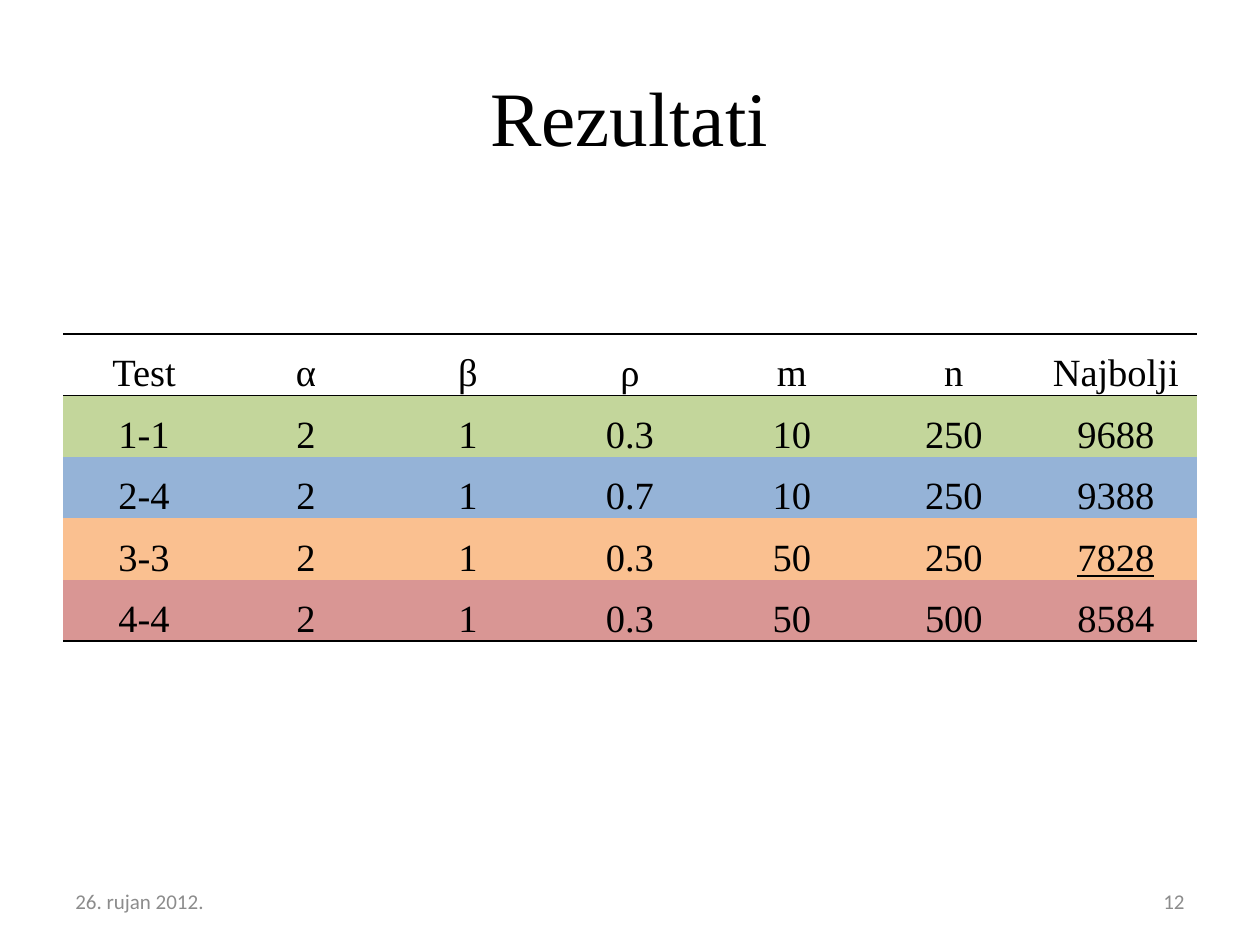
from lxml import etree
from pptx import Presentation, util as u
from pptx.dml.color import RGBColor
from pptx.enum import text
from pptx.oxml import ns

BLACK = RGBColor(0x00, 0x00, 0x00)
WHITE = RGBColor(0xFF, 0xFF, 0xFF)
GRAY = RGBColor(0x8C, 0x8C, 0x8C)
GREEN = RGBColor(0xC3, 0xD6, 0x9B)
BLUE = RGBColor(0x95, 0xB3, 0xD7)
ORANGE = RGBColor(0xFA, 0xC0, 0x90)
RED = RGBColor(0xD9, 0x96, 0x94)

NO_GRID_STYLE = "{2D5ABB26-0587-4C30-8999-92F81FD0307C}"
BEST_RESULT = "7828"
LEFT, CENTER, RIGHT = text.PP_ALIGN.LEFT, text.PP_ALIGN.CENTER, text.PP_ALIGN.RIGHT

RESULTS = [
    (WHITE, ("lnT", "lnB"), ["Test", "α", "β", "ρ", "m", "n", "Najbolji"]),
    (GREEN, (), ["1-1", "2", "1", "0.3", "10", "250", "9688"]),
    (BLUE, (), ["2-4", "2", "1", "0.7", "10", "250", "9388"]),
    (ORANGE, (), ["3-3", "2", "1", "0.3", "50", "250", BEST_RESULT]),
    (RED, ("lnB",), ["4-4", "2", "1", "0.3", "50", "500", "8584"]),
]


class SlideBuilder:
    formats = {
        "title": {"name": "Times New Roman", "size": u.Pt(44)},
        "cell": {"name": "Times New Roman", "size": u.Pt(22)},
        "footer": {"name": "Calibri", "size": u.Pt(12)},
    }
    cell_layout = {
        "margin_left": u.Inches(0.01),
        "margin_top": u.Inches(0.01),
        "margin_right": u.Inches(0.01),
        "margin_bottom": u.Inches(0),
        "vertical_anchor": text.MSO_ANCHOR.BOTTOM,
    }

    def __init__(self, slide):
        self.slide = slide

    def add_wording(self, frame, wording, style, color, alignment):
        paragraph = frame.paragraphs[0]
        paragraph.alignment = alignment
        run = paragraph.add_run()
        run.text = wording
        for key, value in self.formats[style].items():
            setattr(run.font, key, value)
        run.font.color.rgb = color
        return run

    def text_box(self, box, wording, style, color, alignment):
        shape = self.slide.shapes.add_textbox(*map(u.Inches, box))
        frame = shape.text_frame
        frame.word_wrap = True
        frame.vertical_anchor = text.MSO_ANCHOR.MIDDLE
        self.add_wording(frame, wording, style, color, alignment)

    def border(self, cell, side):
        properties = cell._tc.get_or_add_tcPr()
        line = etree.SubElement(properties, ns.qn(f"a:{side}"), w=str(u.Pt(1)))
        fill = etree.SubElement(line, ns.qn("a:solidFill"))
        etree.SubElement(fill, ns.qn("a:srgbClr"), val=str(BLACK))

    def table(self, box, rows):
        shape = self.slide.shapes.add_table(
            len(rows), len(rows[0][2]), *map(u.Inches, box)
        )
        table = shape.table
        table.first_row = table.horz_banding = False
        table._tbl.tblPr.find(ns.qn("a:tableStyleId")).text = NO_GRID_STYLE
        for row_index, (color, sides, values) in enumerate(rows):
            for column_index, value in enumerate(values):
                cell = table.cell(row_index, column_index)
                for key, setting in self.cell_layout.items():
                    setattr(cell, key, setting)
                for side in sides:
                    self.border(cell, side)
                cell.fill.solid()
                cell.fill.fore_color.rgb = color
                run = self.add_wording(cell.text_frame, value, "cell", BLACK, CENTER)
                if value == BEST_RESULT:
                    run.font.underline = True


def main():
    presentation = Presentation()
    presentation.slide_width = u.Inches(10)
    presentation.slide_height = u.Inches(7.5)
    builder = SlideBuilder(presentation.slides.add_slide(presentation.slide_layouts[6]))
    builder.text_box((1.61, 0.29, 6.77, 1.25), "Rezultati", "title", BLACK, CENTER)
    builder.table((0.5, 2.65, 9, 2.44), RESULTS)
    builder.text_box((0.5, 6.95, 2.33, 0.4), "26. rujan 2012.", "footer", GRAY, LEFT)
    builder.text_box((7.17, 6.95, 2.33, 0.4), "12", "footer", GRAY, RIGHT)
    presentation.save("out.pptx")


if __name__ == "__main__":
    main()
